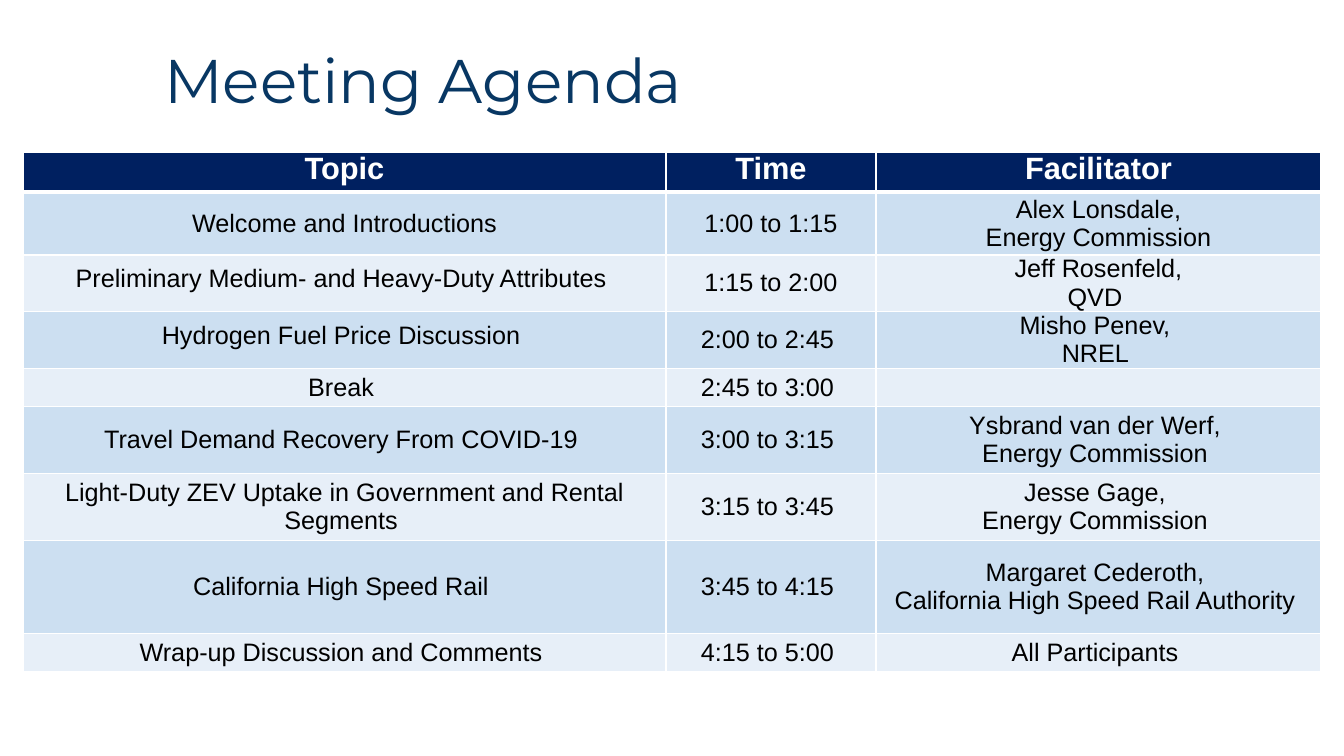
"""Builds the meeting agenda slide with its schedule table."""
from lxml import etree
from pptx import Presentation
from pptx.dml.color import RGBColor
from pptx.enum.text import MSO_ANCHOR, PP_ALIGN
from pptx.oxml.ns import qn
from pptx.util import Pt

TOP, MIDDLE = MSO_ANCHOR.TOP, MSO_ANCHOR.MIDDLE
LEFT, CENTER = PP_ALIGN.LEFT, PP_ALIGN.CENTER
WHITE = RGBColor(0xFF, 0xFF, 0xFF)
BLACK = RGBColor(0x00, 0x00, 0x00)
TITLE_BLUE = RGBColor(0x08, 0x37, 0x63)
NAVY = RGBColor(0x00, 0x20, 0x60)
BANDS = (RGBColor(0xE7, 0xEF, 0xF8), RGBColor(0xCC, 0xDF, 0xF1))
TITLE_ONLY = 5

COLUMN_WIDTHS = (643, 210, 445)
ROW_HEIGHTS = (40, 63, 56, 57, 38, 66, 67, 93, 38)
TIGHT_ROWS = 4
EXACT_LINE_ROWS = (2, 3)
AGENDA = (
    ("Topic", "Time", "Facilitator"),
    ("Welcome and Introductions", "1:00 to 1:15", "Alex Lonsdale,\nEnergy Commission"),
    ("Preliminary Medium- and Heavy-Duty Attributes ", "1:15 to 2:00", "Jeff Rosenfeld,\nQVD "),
    ("Hydrogen Fuel Price Discussion ", "2:00 to 2:45 ", "Misho Penev, \nNREL "),
    ("Break ", "2:45 to 3:00 ", ""),
    ("Travel Demand Recovery From COVID-19 ", "3:00 to 3:15 ",
     "Ysbrand van der Werf, \nEnergy Commission "),
    ("Light-Duty ZEV Uptake in Government and Rental Segments ", "3:15 to 3:45 ",
     "Jesse Gage, \nEnergy Commission "),
    ("California High Speed Rail ", "3:45 to 4:15 ",
     "Margaret Cederoth, \nCalifornia High Speed Rail Authority "),
    ("Wrap-up Discussion and Comments ", "4:15 to 5:00 ", "All Participants "),
)


def px(length):
    return round(length * 914400 / 100.8)


class AgendaDeck:
    def __init__(self):
        self.deck = Presentation()
        self.deck.slide_width, self.deck.slide_height = px(1344), px(756)
        self.slide = self.deck.slides.add_slide(self.deck.slide_layouts[TITLE_ONLY])

    def style(self, paragraph, font, size, color, align, bold=False):
        paragraph.alignment = align
        paragraph.font.name = font
        paragraph.font.size = Pt(size)
        paragraph.font.bold = bold
        paragraph.font.color.rgb = color

    def title(self, wording, left, top, width, height):
        heading = self.slide.shapes.title
        heading.left, heading.top = px(left), px(top)
        heading.width, heading.height = px(width), px(height)
        frame = heading.text_frame
        frame.text = wording
        frame.vertical_anchor = MIDDLE
        frame.paragraphs[0].line_spacing = 0.9
        self.style(frame.paragraphs[0], "Montserrat", 44, TITLE_BLUE, LEFT)

    def borders(self, cell, bottom):
        properties = cell._tc.get_or_add_tcPr()
        for side, width in (("lnL", 1), ("lnR", 1), ("lnT", 1), ("lnB", bottom)):
            line = etree.SubElement(properties, qn(f"a:{side}"), w=str(Pt(width)))
            fill = etree.SubElement(line, qn("a:solidFill"))
            etree.SubElement(fill, qn("a:srgbClr"), val=str(WHITE))

    def cell(self, cell, wording, row, column):
        header = row == 0
        self.borders(cell, 3 if header else 1)
        cell.fill.solid()
        cell.fill.fore_color.rgb = NAVY if header else BANDS[row % 2]
        cell.vertical_anchor = TOP if header else MIDDLE
        if row < TIGHT_ROWS:
            cell.margin_left = cell.margin_right = 0
            cell.margin_top = cell.margin_bottom = 0
        cell.text = wording
        for paragraph in cell.text_frame.paragraphs:
            if column == 0 and row in EXACT_LINE_ROWS:
                paragraph.line_spacing = Pt(14.4)
            self.style(paragraph, "Arial", 22 if header else 18,
                       WHITE if header else BLACK, CENTER, header)

    def table(self, rows, left, top, widths, heights):
        schedule = self.slide.shapes.add_table(
            len(rows), len(widths), px(left), px(top),
            px(sum(widths)), px(sum(heights))).table
        for column, width in zip(schedule.columns, widths):
            column.width = px(width)
        for row, height in zip(schedule.rows, heights):
            row.height = px(height)
        for r, entries in enumerate(rows):
            for c, wording in enumerate(entries):
                self.cell(schedule.cell(r, c), wording, r, c)


def main():
    agenda = AgendaDeck()
    agenda.title("Meeting Agenda", 154, 26, 1098, 115)
    agenda.table(AGENDA, 23, 152, COLUMN_WIDTHS, ROW_HEIGHTS)
    agenda.deck.save("out.pptx")


if __name__ == "__main__":
    main()
